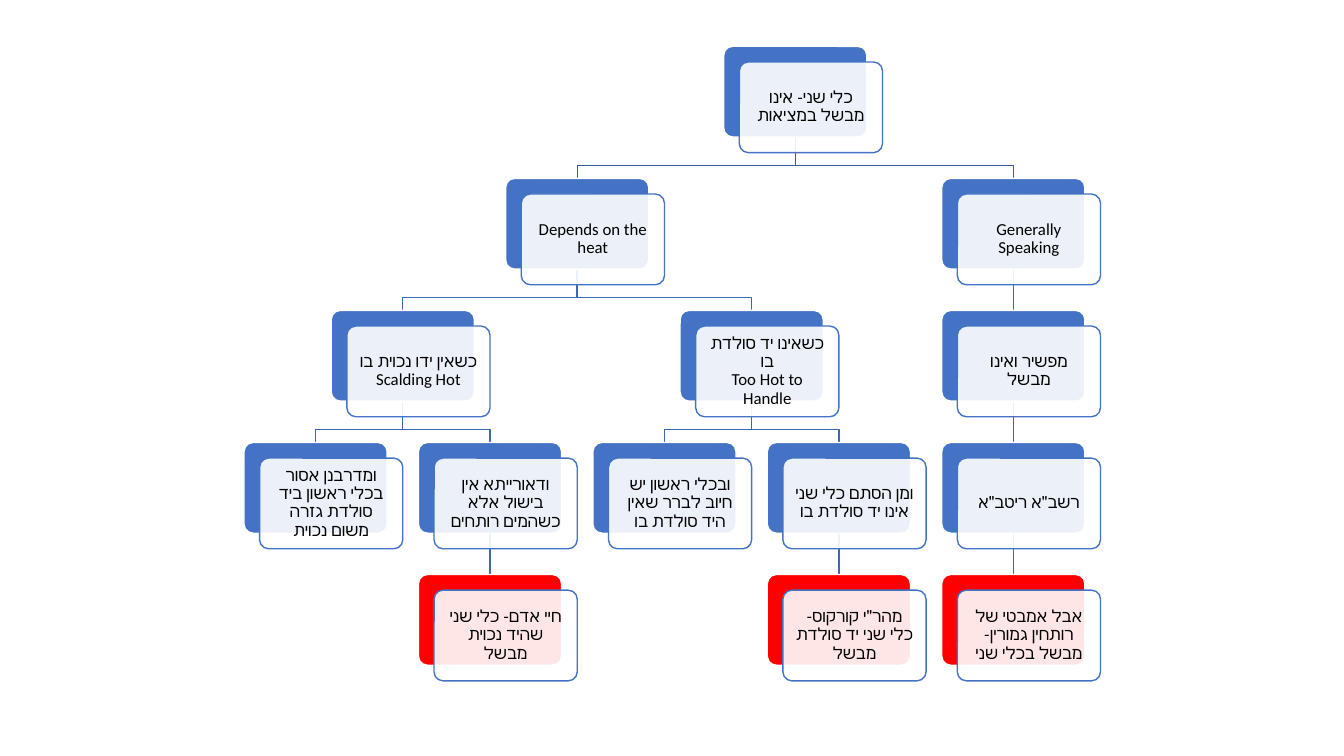
from lxml.etree import SubElement
from pptx import Presentation
from pptx.dml.color import RGBColor
from pptx.enum.shapes import MSO_CONNECTOR as Connector, MSO_SHAPE as Shape
from pptx.enum.text import MSO_ANCHOR as Anchor, PP_ALIGN as Align
from pptx.oxml.ns import qn
from pptx.util import Inches, Pt

BLUE, RED, WHITE, BLACK = "4472C4", "FF0000", "FFFFFF", "000000"
ROOT_LINE, BRANCH_LINE = "365B9D", "3E67B2"

# Each node: text lines, children from left to right, colour of the back card
TREE = (["כלי שני- אינו מבשל במציאות"], [
    (["Depends on the heat"], [
        (["כשאין ידו נכוית בו", "Scalding Hot"], [
            (["ומדרבנן אסור בכלי ראשון ביד סולדת גזרה משום נכוית"], [], BLUE),
            (["ודאורייתא אין בישול אלא כשהמים רותחים"], [
                (["חיי אדם- כלי שני שהיד נכוית מבשל"], [], RED),
            ], BLUE),
        ], BLUE),
        (["כשאינו יד סולדת בו", "Too Hot to Handle"], [
            (["ובכלי ראשון יש חיוב לברר שאין היד סולדת בו"], [], BLUE),
            (["ומן הסתם כלי שני אינו יד סולדת בו"], [
                (["מהר\"י קורקוס- כלי שני יד סולדת מבשל"], [], RED),
            ], BLUE),
        ], BLUE),
    ], BLUE),
    (["Generally Speaking"], [
        (["מפשיר ואינו מבשל"], [
            (["רשב\"א ריטב\"א"], [
                (["אבל אמבטי של רותחין גמורין- מבשל בכלי שני"], [], RED),
            ], BLUE),
        ], BLUE),
    ], BLUE),
], BLUE)

LEFT, TOP = 2.42, 0.46
COLUMN, ROW = 1.73, 1.31
CARD_WIDTH, CARD_HEIGHT = 1.42, 0.9
FRONT_OFFSET = 0.155
BEND = 0.28
INSET = 0.08


def color(hex_string):
    return RGBColor.from_string(hex_string)


def place(node, level, next_column, cards, links):
    """Collect cards and links; leaves take the next column, parents centre over children."""
    lines, children, fill = node
    index = len(cards)
    cards.append(None)
    columns = []
    for child in children:
        column, next_column = place(child, level + 1, next_column, cards, links)
        columns.append(column)
    if columns:
        column = (columns[0] + columns[-1]) / 2
    else:
        column, next_column = next_column, next_column + 1
    cards[index] = (column, level, lines, fill)
    links.extend((column, child_column, level) for child_column in columns)
    return column, next_column


def add_link(shapes, parent_column, child_column, level):
    start_x, end_x = (LEFT + column * COLUMN + CARD_WIDTH / 2
                      for column in (parent_column, child_column))
    start_y = TOP + level * ROW + CARD_HEIGHT
    end_y = TOP + (level + 1) * ROW
    if start_x == end_x:
        link = shapes.add_connector(Connector.STRAIGHT, Inches(start_x), Inches(start_y),
                                    Inches(end_x), Inches(end_y))
        SubElement(link._element.spPr, qn("a:effectLst"))
    else:
        builder = shapes.build_freeform(Inches(start_x), Inches(start_y))
        bend_y = start_y + BEND
        corners = [(start_x, bend_y), (end_x, bend_y), (end_x, end_y)]
        builder.add_line_segments([(Inches(x), Inches(y)) for x, y in corners], close=False)
        link = builder.convert_to_shape()
        link.fill.background()
        link.shadow.inherit = False
    link.line.color.rgb = color(BRANCH_LINE if level else ROOT_LINE)
    link.line.width = Pt(1)


def add_card(shapes, left, top, fill, line):
    card = shapes.add_shape(Shape.ROUNDED_RECTANGLE, Inches(left), Inches(top),
                            Inches(CARD_WIDTH), Inches(CARD_HEIGHT))
    card.adjustments[0] = 0.1
    card.shadow.inherit = False
    card.fill.solid()
    card.fill.fore_color.rgb = color(fill)
    card.line.color.rgb = color(line)
    card.line.width = Pt(1)
    return card


def set_opacity(shape, percent):
    fill_color = shape._element.spPr.find(qn("a:solidFill"))[0]
    SubElement(fill_color, qn("a:alpha"), val=str(percent * 1000))


def write_text(shape, lines):
    frame = shape.text_frame
    frame.word_wrap = True
    frame.vertical_anchor = Anchor.MIDDLE
    frame.margin_left = frame.margin_right = Inches(INSET)
    frame.margin_top = frame.margin_bottom = Inches(INSET)
    paragraph = frame.paragraphs[0]
    paragraph.alignment = Align.CENTER
    paragraph.line_spacing = 0.9
    if not lines[0].isascii():
        paragraph._p.get_or_add_pPr().set("rtl", "1")
    for number, line in enumerate(lines):
        if number:
            paragraph.add_line_break()
        run = paragraph.add_run()
        run.text = line
        run.font.name = "Calibri"
        run.font.size = Pt(12)
        run.font.color.rgb = color(BLACK)


def main():
    presentation = Presentation()
    presentation.slide_width, presentation.slide_height = Inches(13.33), Inches(7.5)
    slide = presentation.slides.add_slide(presentation.slide_layouts[6])
    cards, links = [], []
    place(TREE, 0, 0, cards, links)
    for link in links:
        add_link(slide.shapes, *link)
    for column, level, lines, fill in cards:
        left, top = LEFT + column * COLUMN, TOP + level * ROW
        add_card(slide.shapes, left, top, fill, WHITE)
        front = add_card(slide.shapes, left + FRONT_OFFSET, top + FRONT_OFFSET, WHITE, BLUE)
        set_opacity(front, 90)
        write_text(front, lines)
    presentation.save("out.pptx")


if __name__ == "__main__":
    main()
